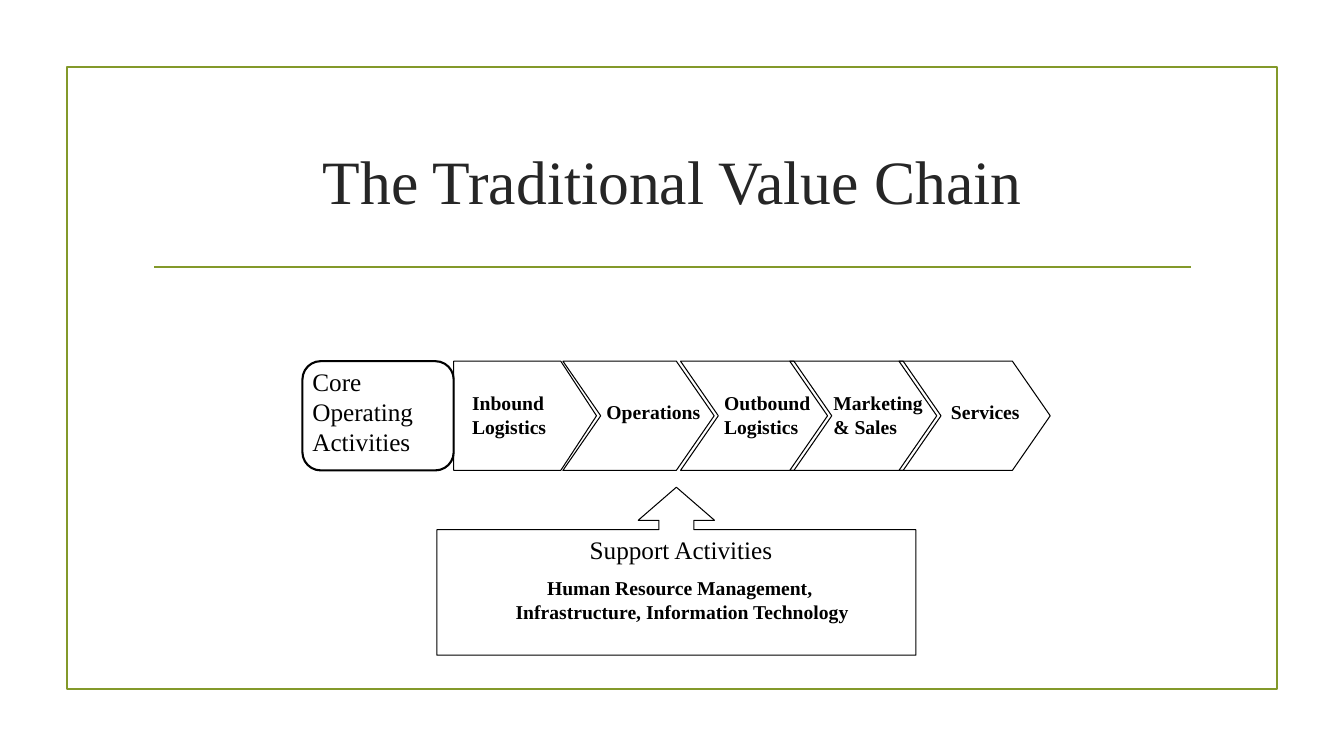
from pptx import Presentation
from pptx.dml.color import RGBColor
from pptx.enum.shapes import MSO_CONNECTOR, MSO_SHAPE
from pptx.enum.text import MSO_ANCHOR, MSO_AUTO_SIZE, PP_ALIGN
from pptx.oxml.ns import qn
from pptx.util import Inches, Pt
from lxml import etree

RECTANGLE, ROUNDED = MSO_SHAPE.RECTANGLE, MSO_SHAPE.ROUNDED_RECTANGLE
PENTAGON, CHEVRON = MSO_SHAPE.PENTAGON, MSO_SHAPE.CHEVRON
ARROW_CALLOUT = MSO_SHAPE.UP_ARROW_CALLOUT
LEFT, CENTER = PP_ALIGN.LEFT, PP_ALIGN.CENTER
TOP, MIDDLE = MSO_ANCHOR.TOP, MSO_ANCHOR.MIDDLE
FIXED, GROW = MSO_AUTO_SIZE.NONE, MSO_AUTO_SIZE.SHAPE_TO_FIT_TEXT

OLIVE = RGBColor(0x83, 0x99, 0x2A)
BLACK = RGBColor(0, 0, 0)
CHARCOAL = RGBColor(0x26, 0x26, 0x26)
FONT = "Times New Roman"

TITLE = "The Traditional Value Chain"
CORE = "Core Operating Activities"
# Stage lines, left column of its arrow, left column and columns of its label
STAGES = [
    (["Inbound", "Logistics"], 54, 55, 11.3),
    (["Operations"], 67, 71, 13.6),
    (["Outbound", "Logistics"], 81, 85, 12.7),
    (["Marketing", "& Sales"], 94, 98, 13.2),
    (["Services"], 107, 112, 10.6),
]
SUPPORT = "Support Activities"
SUPPORT_AREAS = ["Human Resource Management, ", "Infrastructure, Information Technology"]

# Grid of twelve columns and rows to the inch
CELL = 1 / 12
CHAIN_ROW, CHAIN_ROWS = 43, 13
CORE_COLUMN, CORE_COLUMNS = 36, 18
PENTAGON_COLUMNS, CHEVRON_COLUMNS = 17, 18

presentation = Presentation()
presentation.slide_width, presentation.slide_height = Inches(13.33), Inches(7.5)
slide = presentation.slides.add_slide(presentation.slide_layouts[6])


def cells(*counts):
    return [count * CELL for count in counts]


def add_outline(kind, box, color, width, adjustments=()):
    shape = slide.shapes.add_shape(kind, *map(Inches, box))
    shape.shadow.inherit = False
    shape.fill.background()
    shape.line.color.rgb = color
    shape.line.width = Pt(width)
    for index, value in enumerate(adjustments):
        shape.adjustments[index] = value


def add_text(lines, box, size, color=BLACK, bold=False, align=LEFT, anchor=TOP, wrap=False):
    frame = slide.shapes.add_textbox(*map(Inches, box)).text_frame
    frame.word_wrap = wrap
    frame.auto_size = FIXED if wrap else GROW
    frame.vertical_anchor = anchor
    for index, line in enumerate(lines):
        paragraph = frame.add_paragraph() if index else frame.paragraphs[0]
        paragraph.alignment = align
        run = paragraph.add_run()
        run.text = line
        run.font.name, run.font.size, run.font.bold = FONT, Pt(size), bold
        run.font.color.rgb = color


def add_title_rule(left, right, y):
    rule = slide.shapes.add_connector(
        MSO_CONNECTOR.STRAIGHT, Inches(left), Inches(y), Inches(right), Inches(y))
    rule.line.color.rgb = OLIVE
    rule.line.width = Pt(1.25)
    etree.SubElement(rule._element.spPr, qn("a:effectLst"))


add_outline(RECTANGLE, cells(8, 8, 144, 74), OLIVE, 1.25)
add_title_rule(1.53, 11.81, 2.65)
add_text([TITLE], (1.42, 1.07, 10.5, 1.43), 44, CHARCOAL, align=CENTER, anchor=MIDDLE, wrap=True)

for index, (lines, arrow_column, label_column, label_columns) in enumerate(STAGES):
    kind, columns, point = (
        (CHEVRON, CHEVRON_COLUMNS, 0.346) if index else (PENTAGON, PENTAGON_COLUMNS, 0.327))
    add_outline(kind, cells(arrow_column, CHAIN_ROW, columns, CHAIN_ROWS), BLACK, 0.75, [point])
    label_row, label_rows = (46, 7) if len(lines) == 2 else (47, 4)
    add_text(lines, cells(label_column, label_row, label_columns, label_rows), 14, bold=True)

add_outline(ROUNDED, cells(CORE_COLUMN, CHAIN_ROW, CORE_COLUMNS, CHAIN_ROWS), BLACK, 1.5, [0.167])
add_text([CORE], cells(CORE_COLUMN, CHAIN_ROW, 16, 12), 18, wrap=True)

add_outline(ARROW_CALLOUT, cells(52, 58, 57, 20), BLACK, 0.75, [0.208, 0.227, 0.197, 0.747])
add_text([SUPPORT], cells(69, 63, 24.4, 5), 18)
add_text(SUPPORT_AREAS, cells(60, 68, 42.4, 7), 14, bold=True, align=CENTER)

presentation.save("out.pptx")
